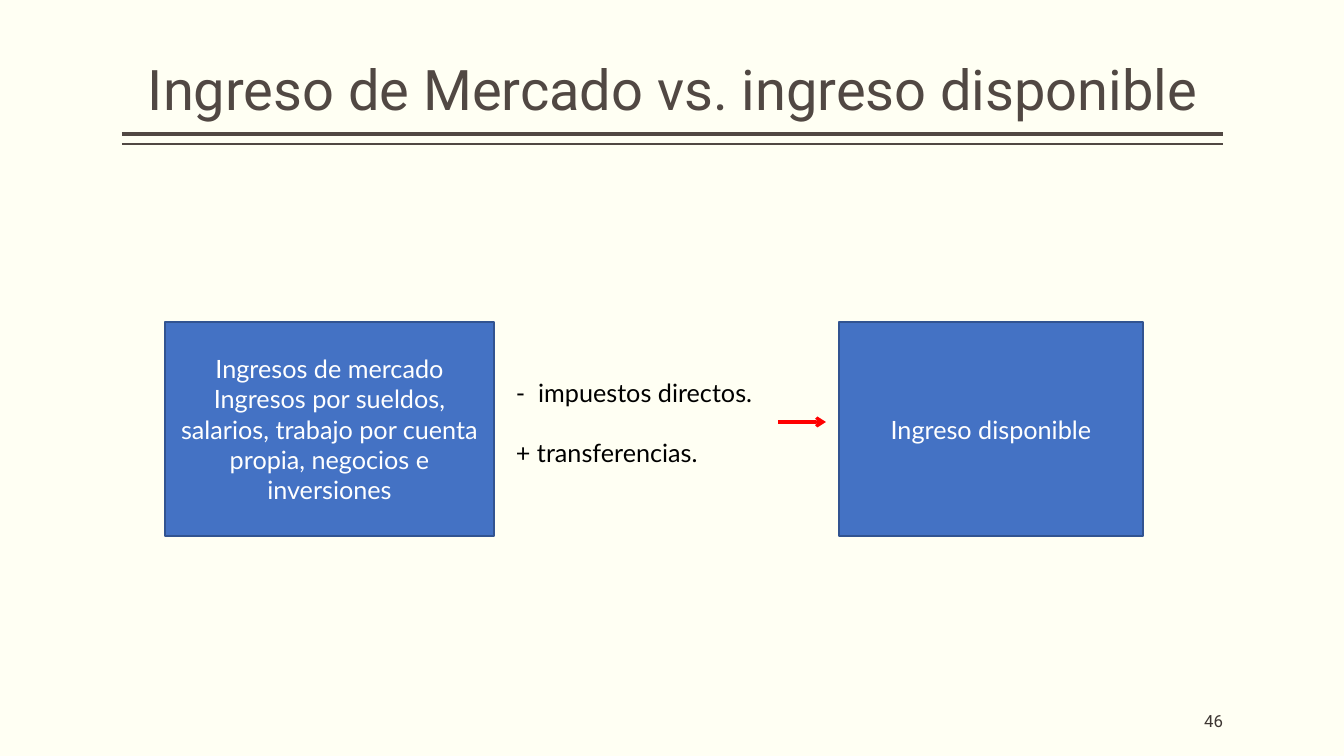
"""Builds the slide comparing market income with disposable income."""
from lxml.etree import SubElement
from pptx import Presentation
from pptx.dml.color import RGBColor
from pptx.enum.shapes import MSO_CONNECTOR as Connector, MSO_SHAPE as Shape
from pptx.enum.text import MSO_ANCHOR as Anchor, PP_ALIGN as Align
from pptx.oxml.ns import qn
from pptx.util import Pt

TITLE = "Ingreso de Mercado vs. ingreso disponible"
INCOMES = [
    (165, 329, ["Ingresos de mercado",
                "Ingresos por sueldos, salarios, trabajo por cuenta propia, "
                "negocios e inversiones"]),
    (839, 304, ["Ingreso disponible"]),
]
ADJUSTMENTS = ["-  impuestos directos.", "+ transferencias."]
PAGE = "46"
RULES = [(134, 3), (144, 1)]
COLORS = {
    "background": "FFFFF3", "title": "514843", "box": "4472C4", "edge": "325491",
    "box_text": "FFFFFF", "text": "000000", "arrow": "FF0000", "page": "3D3632",
}
LEFT, RIGHT = 122, 1223
BOX_TOP, BOX_HEIGHT = 322, 214
ARROW_Y = 422


def px(length):
    return round(length * 914400 / 100.8)


def color(name):
    return RGBColor.from_string(COLORS[name])


def write(shape, lines, size, font, ink, align, anchor, side=10, gap=0, spacing=None):
    frame = shape.text_frame
    frame.word_wrap = True
    frame.vertical_anchor = anchor
    frame.margin_left = frame.margin_right = px(side)
    frame.margin_top = frame.margin_bottom = px(5)
    for index, line in enumerate(lines):
        paragraph = frame.add_paragraph() if index else frame.paragraphs[0]
        paragraph.alignment = align
        paragraph.line_spacing = spacing
        paragraph.space_before = Pt(gap if index else 0)
        run = paragraph.add_run()
        run.text = line
        run.font.size = Pt(size)
        run.font.name = font
        run.font.color.rgb = color(ink)


def add_text(slide, box, *args, **options):
    write(slide.shapes.add_textbox(*map(px, box)), *args, **options)


def add_line(slide, start, end, y, ink, width):
    line = slide.shapes.add_connector(
        Connector.STRAIGHT, px(start), px(y), px(end), px(y))
    line.line.color.rgb = color(ink)
    line.line.width = Pt(width)
    SubElement(line._element.spPr, qn("a:effectLst"))
    return line


def add_income(slide, left, width, lines):
    income = slide.shapes.add_shape(
        Shape.RECTANGLE, px(left), px(BOX_TOP), px(width), px(BOX_HEIGHT))
    income.shadow.inherit = False
    income.fill.solid()
    income.fill.fore_color.rgb = color("box")
    income.line.color.rgb = color("edge")
    income.line.width = Pt(1)
    write(income, lines, 18, "Lato", "box_text", Align.CENTER, Anchor.MIDDLE)


def main():
    deck = Presentation()
    deck.slide_width, deck.slide_height = px(1344), px(756)
    slide = deck.slides.add_slide(deck.slide_layouts[6])
    slide.background.fill.solid()
    slide.background.fill.fore_color.rgb = color("background")

    for y, width in RULES:
        add_line(slide, LEFT, RIGHT, y, "title", width)
    add_text(slide, (LEFT, 7, RIGHT - LEFT, 121), [TITLE], 40, "Roboto", "title",
             Align.CENTER, Anchor.BOTTOM, side=0, spacing=0.9)

    for left, width, lines in INCOMES:
        add_income(slide, left, width, lines)
    add_text(slide, (506, 372, 272, 102), ADJUSTMENTS, 18, "Lato", "text",
             Align.LEFT, Anchor.TOP, gap=21.6)

    arrow = add_line(slide, 778, 826, ARROW_Y, "arrow", 2.25)
    SubElement(arrow.line._get_or_add_ln(), qn("a:tailEnd"), type="arrow")

    add_text(slide, (RIGHT - 202, 701, 202, 40), [PAGE], 12, "Roboto", "page",
             Align.RIGHT, Anchor.MIDDLE, side=0)
    deck.save("out.pptx")


if __name__ == "__main__":
    main()
